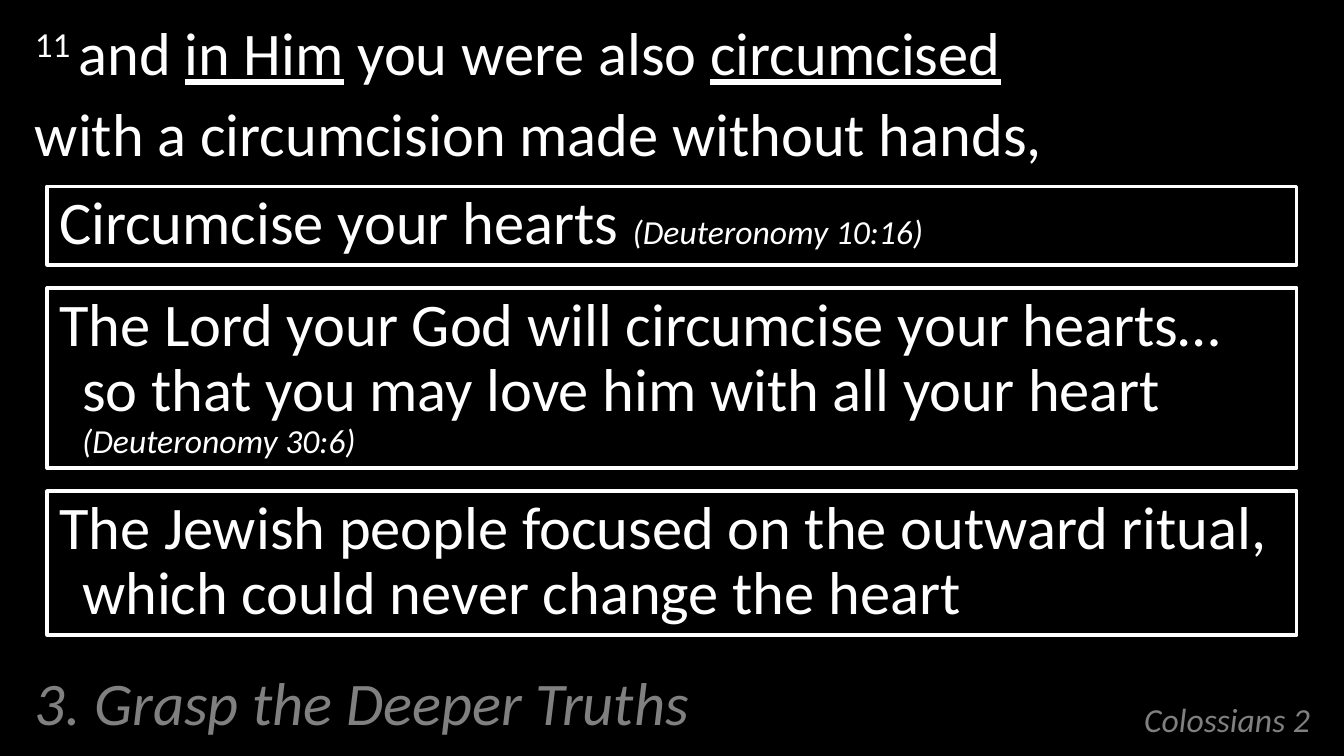
"""Build the Colossians 2 verse slide with three boxed notes."""
from lxml import etree
from pptx import Presentation
from pptx.dml.color import RGBColor
from pptx.enum.shapes import MSO_SHAPE
from pptx.enum.text import MSO_ANCHOR, MSO_AUTO_SIZE, PP_ALIGN
from pptx.oxml.ns import qn
from pptx.util import Inches, Pt

BLACK = RGBColor(0, 0, 0)
WHITE = RGBColor(255, 255, 255)
GRAY = RGBColor(128, 128, 128)
ROUND = MSO_SHAPE.ROUNDED_RECTANGLE
TOP, BOTTOM = MSO_ANCHOR.TOP, MSO_ANCHOR.BOTTOM
GROW, FIXED = MSO_AUTO_SIZE.SHAPE_TO_FIT_TEXT, MSO_AUTO_SIZE.NONE
LEFT, RIGHT = PP_ALIGN.LEFT, PP_ALIGN.RIGHT

PLAIN = {}
UNDER = {"underline": True}
REF = {"size": Pt(20), "italic": True}
RAISED = "30000"

VERSE = [
    [("11 ", PLAIN, RAISED), ("and ", PLAIN), ("in Him", UNDER),
     (" you were also ", PLAIN), ("circumcised", UNDER)],
    [("with a circumcision made without hands,", PLAIN)],
]
POINT = [[("3. Grasp the Deeper Truths", {"italic": True})]]
BOOK = [[("Colossians 2", REF)]]
NOTES = [
    (0.65, [("Circumcise your hearts ", PLAIN), ("(Deuteronomy 10:16)", REF)]),
    (1.49, [("The Lord your God will circumcise your hearts…\v"
             "so that you may love him with all your heart ", PLAIN),
            ("(Deuteronomy 30:6)", REF)]),
    (1.19, [("The Jewish people focused on the outward ritual,\v"
             "which could never change the heart", PLAIN)]),
]

TEXTS = [
    ((7.06, 5.56, 3.87, 0.6), BOOK, GRAY, BOTTOM, 0,
     {"alignment": RIGHT, "line_spacing": 0.8}),
    ((0.19, 0.12, 10.74, 1.4), VERSE, WHITE, TOP, 0.38,
     {"line_spacing": 0.95, "space_before": Pt(7)}),
    ((0.19, 5.56, 8.12, 0.6), POINT, GRAY, BOTTOM, 0.38,
     {"line_spacing": 0.95, "space_before": Pt(7)}),
]
NOTE_X, NOTE_Y, NOTE_W, GAP = 0.39, 1.54, 10.33, 0.19


def assign(item, values):
    for name, value in values.items():
        setattr(item, name, value)


def write(shape, paras, color, anchor, hang, style, fit=FIXED):
    frame = shape.text_frame
    assign(frame, {"word_wrap": True, "auto_size": fit,
                   "vertical_anchor": anchor})
    for i, runs in enumerate(paras):
        para = frame.add_paragraph() if i else frame.paragraphs[0]
        assign(para, {"alignment": LEFT, **style})
        props = para._p.get_or_add_pPr()
        props.set("marL", str(Inches(hang)))
        props.set("indent", str(-Inches(hang)))
        for text, look, *base in runs:
            for j, part in enumerate(text.split("\v")):
                if j:
                    para.add_line_break()
                run = para.add_run()
                run.text = part
                assign(run.font, {"name": "Calibri", "size": Pt(36), **look})
                run.font.color.rgb = color
                if base:
                    run._r.get_or_add_rPr().set("baseline", base[0])


def add_note(slide, top, height, runs):
    box = slide.shapes.add_shape(
        ROUND, *map(Inches, (NOTE_X, top, NOTE_W, height)))
    box.adjustments[0] = 0
    box.shadow.inherit = False
    box.fill.solid()
    box.fill.fore_color.rgb = BLACK
    tint = box._element.spPr.find(qn("a:solidFill"))[0]
    etree.SubElement(tint, qn("a:alpha"), val="60000")
    box.line.color.rgb = WHITE
    box.line.width = Pt(2)
    write(box, [runs], WHITE, TOP, 0.19, {"line_spacing": 0.9}, GROW)


def main():
    deck = Presentation()
    assign(deck, {"slide_width": Inches(11.11), "slide_height": Inches(6.25)})
    slide = deck.slides.add_slide(deck.slide_layouts[6])
    slide.background.fill.solid()
    slide.background.fill.fore_color.rgb = BLACK
    for place, *rest in TEXTS:
        write(slide.shapes.add_textbox(*map(Inches, place)), *rest)
    top = NOTE_Y
    for height, runs in NOTES:
        add_note(slide, top, height, runs)
        top += height + GAP
    deck.save("out.pptx")


if __name__ == "__main__":
    main()
